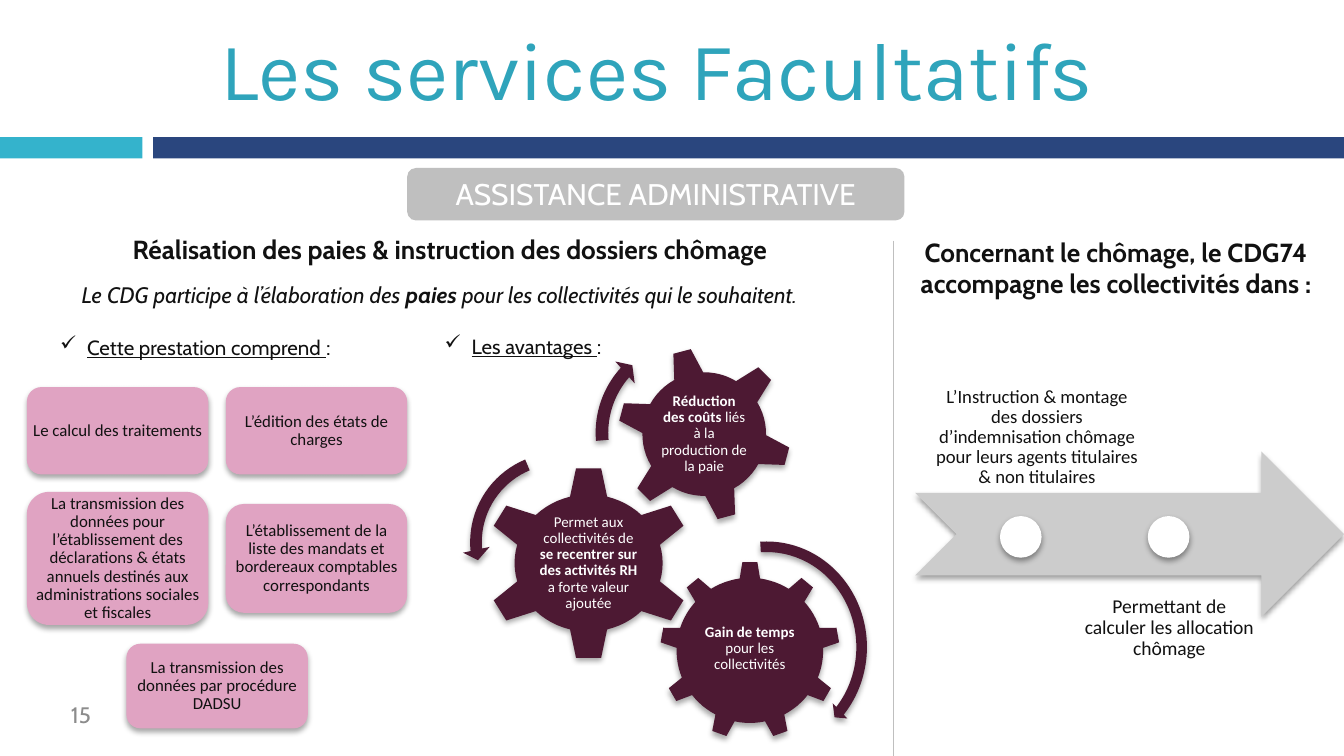
from dataclasses import dataclass
from math import cos, radians, sin

from lxml import etree
from pptx import Presentation
from pptx.dml.color import RGBColor
from pptx.enum.shapes import MSO_CONNECTOR, MSO_SHAPE
from pptx.enum.text import MSO_ANCHOR, PP_ALIGN
from pptx.oxml.ns import qn
from pptx.util import Inches, Pt

RECT, ROUNDED, OVAL = MSO_SHAPE.RECTANGLE, MSO_SHAPE.ROUNDED_RECTANGLE, MSO_SHAPE.OVAL
CURVED, CURVED_LEFT = MSO_SHAPE.CIRCULAR_ARROW, MSO_SHAPE.LEFT_CIRCULAR_ARROW
BIG_ARROW = MSO_SHAPE.NOTCHED_RIGHT_ARROW
STRAIGHT = MSO_CONNECTOR.STRAIGHT
LEFT, CENTER = PP_ALIGN.LEFT, PP_ALIGN.CENTER
TOP, MIDDLE, BOTTOM = MSO_ANCHOR.TOP, MSO_ANCHOR.MIDDLE, MSO_ANCHOR.BOTTOM

PAGE_WIDTH = 10
PAGE_HEIGHT = PAGE_WIDTH * 9 / 16

NAVY = RGBColor(0x2A, 0x46, 0x7E)
CYAN = RGBColor(0x34, 0xB3, 0xCC)
TEAL = RGBColor(0x2F, 0xA4, 0xBB)
INK = RGBColor(0x11, 0x11, 0x11)
MUTED = RGBColor(0x8C, 0x8C, 0x8C)
GREY = RGBColor(0xBF, 0xBF, 0xBF)
SILVER = RGBColor(0xCC, 0xCC, 0xCC)
PINK = RGBColor(0xE0, 0xA3, 0xC2)
PLUM = RGBColor(0x4D, 0x19, 0x33)
WHITE = RGBColor(0xFF, 0xFF, 0xFF)


@dataclass
class Span:
    text: str
    size: float
    bold: bool = False
    italic: bool = False
    underline: bool = False


@dataclass
class Style:
    font: str = "Cabin"
    color: RGBColor = INK
    align: int = CENTER
    anchor: int = TOP
    spacing: float = 1.0
    margin_x: float = 0.1
    margin_y: float = 0.05
    indent: float = 0
    bullet: str = ""


@dataclass
class Gear:
    x: float
    y: float
    teeth: int
    turn: float  # angle of the first tooth, clockwise from the top
    root: float
    tip: float
    root_half: float  # half tooth angles
    tip_half: float
    stretch: float
    text_width: float
    spans: list[Span]


def write(shape, spans: list[Span], style: Style) -> None:
    frame = shape.text_frame
    frame.word_wrap = True
    frame.vertical_anchor = style.anchor
    frame.margin_left = frame.margin_right = Inches(style.margin_x)
    frame.margin_top = frame.margin_bottom = Inches(style.margin_y)
    para = frame.paragraphs[0]
    properties = para._p.get_or_add_pPr()
    if style.indent:
        properties.set("marL", str(Inches(style.indent)))
    if style.bullet:
        properties.set("indent", str(-Inches(style.indent)))
        etree.SubElement(properties, qn("a:buChar")).set("char", style.bullet)
    para.alignment = style.align
    para.line_spacing = style.spacing
    for span in spans:
        run = para.add_run()
        run.text = span.text
        font = run.font
        font.name, font.size, font.color.rgb = style.font, Pt(span.size), style.color
        font.bold, font.italic, font.underline = span.bold, span.italic, span.underline


def add_text(page, left: float, top: float, width: float, height: float,
             spans: list[Span], style: Style) -> None:
    box = page.shapes.add_textbox(Inches(left), Inches(top), Inches(width), Inches(height))
    write(box, spans, style)


def paint(shape, color: RGBColor, shadow_percent: int = 0) -> None:
    shape.shadow.inherit = False
    shape.fill.solid()
    shape.fill.fore_color.rgb = color
    shape.line.fill.background()
    if shadow_percent:
        effects = shape._element.spPr.find(qn("a:effectLst"))
        outer = etree.SubElement(effects, qn("a:outerShdw"), blurRad=str(Pt(3.1)),
                                 dist=str(Pt(1.8)), dir="5400000", rotWithShape="0")
        black = etree.SubElement(outer, qn("a:srgbClr"), val="000000")
        etree.SubElement(black, qn("a:alpha"), val=str(shadow_percent * 1000))


def add_preset(page, kind, left: float, top: float, width: float, height: float,
               color: RGBColor, shadow_percent: int = 0):
    shape = page.shapes.add_shape(kind, Inches(left), Inches(top), Inches(width), Inches(height))
    paint(shape, color, shadow_percent)
    return shape


def add_gear(page, gear: Gear) -> None:
    def point(radius: float, angle: float) -> tuple[int, int]:
        turn = radians(angle)
        return (Inches(gear.x + gear.stretch * radius * sin(turn)),
                Inches(gear.y - radius * cos(turn)))

    pitch = 360 / gear.teeth
    valley = pitch - 2 * gear.root_half
    outline = []
    for tooth in range(gear.teeth):
        middle = gear.turn + tooth * pitch
        outline += [point(gear.root, middle - gear.root_half),
                    point(gear.tip, middle - gear.tip_half),
                    point(gear.tip, middle + gear.tip_half)]
        outline += [point(gear.root, middle + gear.root_half + valley * step / 6)
                    for step in range(6)]
    builder = page.shapes.build_freeform(*outline[0], scale=1.0)
    builder.add_line_segments(outline[1:], close=True)
    shape = builder.convert_to_shape()
    paint(shape, PLUM, 35)
    margin = (shape.width.inches - gear.text_width) / 2
    write(shape, gear.spans, Style("Calibri", WHITE, anchor=MIDDLE, spacing=0.9,
                                   margin_x=margin, margin_y=0.2))


deck = Presentation()
deck.slide_width, deck.slide_height = Inches(PAGE_WIDTH), Inches(PAGE_HEIGHT)
page = deck.slides.add_slide(deck.slide_layouts[6])

# Title, bands and page number
add_preset(page, RECT, 1.14, 1.02, 8.86, 0.16, NAVY)
add_preset(page, RECT, 0, 1.02, 1.06, 0.16, CYAN)
add_text(page, 1.14, 0.08, 8.36, 0.85, [Span("Les services Facultatifs", 44)],
         Style("Karla", TEAL, LEFT, MIDDLE, indent=0.4))
add_text(page, 0.43, 5.17, 2.33, 0.3, [Span("15", 12)], Style(color=MUTED, align=LEFT, anchor=MIDDLE))

# Headings
banner = add_preset(page, ROUNDED, 3.03, 1.25, 3.7, 0.39, GREY)
write(banner, [Span("ASSISTANCE ADMINISTRATIVE", 16)],
      Style(color=WHITE, margin_x=0.04, margin_y=0.04))
add_text(page, 0.2, 1.69, 6.3, 0.34,
         [Span("Réalisation des paies & instruction des dossiers chômage", 14, bold=True)], Style())
add_text(page, 0.16, 2.04, 6.26, 0.3,
         [Span("Le CDG participe à l’élaboration des", 12, italic=True),
          Span(" paies ", 12, bold=True, italic=True),
          Span("pour les collectivités qui le souhaitent. ", 12, italic=True)], Style())
add_text(page, 6.73, 1.71, 3.15, 0.81,
         [Span("Concernant le chômage, le CDG74 accompagne les collectivités dans :", 14, bold=True)],
         Style())
for label, left, top, width in [("Cette prestation comprend ", 0.35, 2.43, 2.37),
                                ("Les avantages ", 3.21, 2.42, 1.48)]:
    add_text(page, left, top, width, 0.3, [Span(label, 11, underline=True), Span(":", 12)],
             Style(align=LEFT, indent=0.2, bullet="✓"))

# Services included
SERVICES = [
    (0.2, 2.88, 0.65, "Le calcul des traitements"),
    (1.68, 2.88, 0.65, "L’édition des états de charges"),
    (0.2, 3.66, 0.99, "La transmission des données pour l’établissement des déclarations & états "
                      "annuels destinés aux administrations sociales et fiscales"),
    (1.68, 3.75, 0.81, "L’établissement de la liste des mandats et bordereaux comptables correspondants"),
    (0.94, 4.79, 0.63, "La transmission des données par procédure DADSU"),
]
for left, top, height, label in SERVICES:
    card = add_preset(page, ROUNDED, left, top, 1.35, height, PINK, 35)
    write(card, [Span(label, 9)],
          Style("Calibri", anchor=MIDDLE, spacing=0.9, margin_x=0, margin_y=0))

# Advantages: gears and the arrows turning around them
GEARS = [
    Gear(5.24, 3.23, 6, -15, 0.46, 0.64, 14, 6, 1, 0.64,
         [Span("Réduction des coûts ", 8, bold=True), Span("liés à la production de la paie", 8)]),
    Gear(5.58, 4.84, 9, 0, 0.54, 0.66, 8, 4.8, 1.01, 0.7,
         [Span("Gain de temps ", 8, bold=True), Span("pour les collectivités", 8)]),
    Gear(4.38, 4.19, 6, 0, 0.51, 0.71, 14.5, 7, 1.08, 0.78,
         [Span("Permet aux collectivités de ", 8),
          Span("se recentrer sur des activités RH ", 8, bold=True),
          Span("a forte valeur ajoutée", 8)]),
]
for gear in GEARS:
    add_gear(page, gear)

TURNING_ARROWS = [
    (CURVED, 4.92, 3.99, 1.57, 1.65, (0.05, 2.99, 24.6, 159.89, 0.05)),
    (CURVED_LEFT, 3.44, 3.31, 1.45, 1.45, (0.06, 4.3, 104.89, 148.38, 0.07)),
    (CURVED, 4.37, 2.44, 1.56, 1.56, (0.06, 3.94, 133.14, 105.08, 0.07)),
]
for kind, left, top, width, height, adjustments in TURNING_ARROWS:
    arrow = add_preset(page, kind, left, top, width, height, PLUM, 35)
    for index, value in enumerate(adjustments):
        arrow.adjustments[index] = value

# Unemployment timeline
add_text(page, 6.89, 2.66, 1.65, 1.02,
         [Span("L’Instruction & montage des dossiers d’indemnisation chômage pour leurs agents "
               "titulaires & non titulaires", 10)],
         Style("Calibri", anchor=BOTTOM, spacing=0.9, margin_x=0.05))
add_text(page, 7.99, 4.39, 1.42, 0.71, [Span("Permettant de calculer les allocation chômage", 10.5)],
         Style("Calibri", spacing=0.9, margin_x=0.05))
add_preset(page, BIG_ARROW, 6.81, 3.36, 3.19, 1.23, SILVER, 38)
for left in (8.54, 7.44):
    add_preset(page, OVAL, left, 3.84, 0.31, 0.31, WHITE, 38)

# Column divider
divider = page.shapes.add_connector(STRAIGHT, Inches(6.65), Inches(1.79),
                                    Inches(6.65), Inches(PAGE_HEIGHT))
divider.line.color.rgb = GREY
divider.line.width = Pt(0.75)
etree.SubElement(divider._element.spPr, qn("a:effectLst"))

deck.save("out.pptx")
